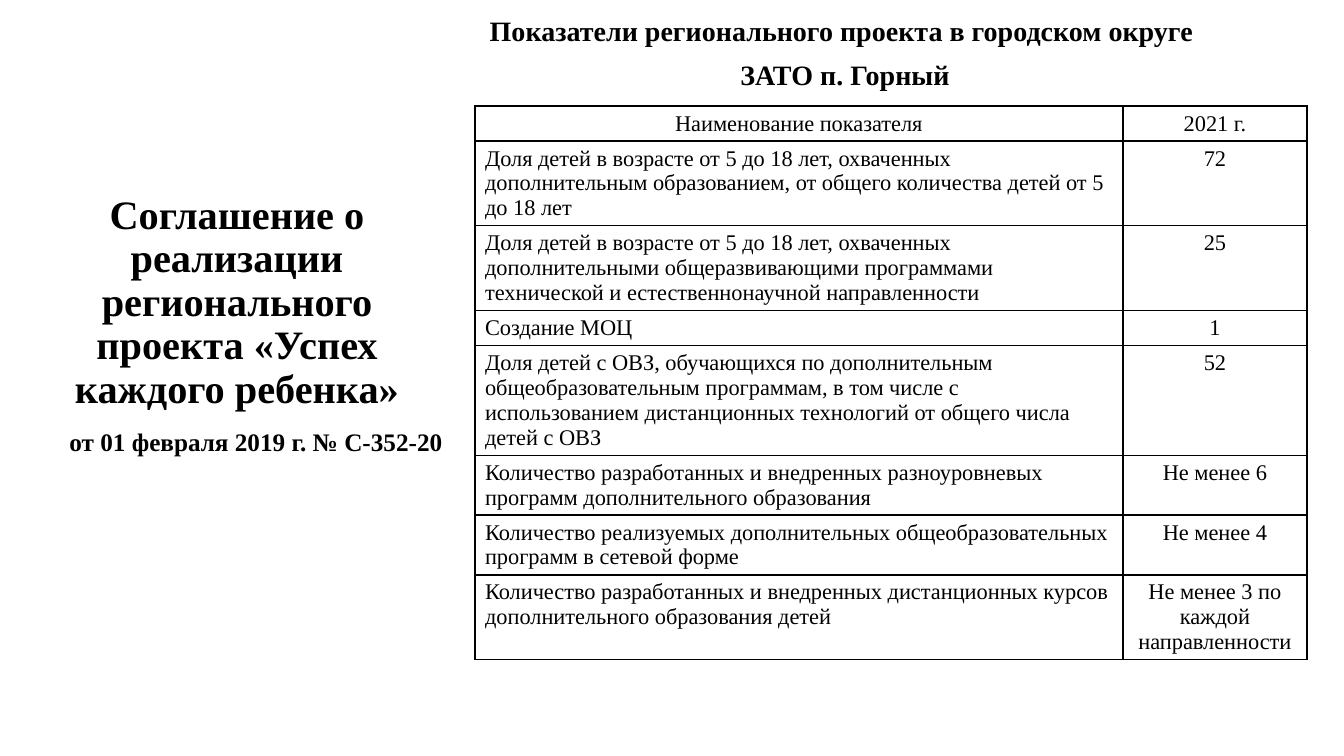
from lxml.etree import SubElement as Sub
from pptx import Presentation
from pptx.dml.color import RGBColor as Rgb
from pptx.enum.text import MSO_ANCHOR as Anchor, MSO_AUTO_SIZE as Fit, PP_ALIGN as Align
from pptx.oxml.ns import qn
from pptx.util import Emu, Pt

FONT = "Times New Roman"
BLACK = "000000"
CAPTION_LAYOUT = 7
COLS = [648, 184]
ROW = 32
ROWS = [
    ("Наименование показателя", "2021 г."),
    ("Доля детей в возрасте от 5 до 18 лет, охваченных дополнительным "
     "образованием, от общего количества детей от 5 до 18 лет", "72"),
    ("Доля детей в возрасте от 5 до 18 лет, охваченных дополнительными "
     "общеразвивающими программами технической и естественнонаучной "
     "направленности", "25"),
    ("Создание МОЦ", "1"),
    ("Доля детей с ОВЗ, обучающихся по дополнительным общеобразовательным "
     "программам, в том числе с использованием дистанционных технологий "
     "от общего числа детей с ОВЗ", "52"),
    ("Количество разработанных и внедренных разноуровневых программ "
     "дополнительного образования", "Не менее 6"),
    ("Количество реализуемых дополнительных общеобразовательных программ "
     "в сетевой форме", "Не менее 4"),
    ("Количество разработанных и внедренных дистанционных курсов "
     "дополнительного образования детей", "Не менее 3 по каждой направленности"),
]


def px(n):
    """Turn pixels, 100.8 to the inch, into EMU."""
    return Emu(round(n * 914400 / 100.8))


def color(code):
    return Rgb.from_string(code)


def write(para, text, size, bold=False, align=Align.CENTER):
    para.alignment = align
    run = para.add_run()
    run.text = text
    font = run.font
    font.name, font.size, font.bold = FONT, Pt(size), bold
    font.color.rgb = color(BLACK)


def fill_holder(holder, box, lines, size, before=0, anchor=Anchor.TOP):
    """Move a placeholder and write bold centred lines without bullets."""
    holder.left, holder.top, holder.width, holder.height = map(px, box)
    frame = holder.text_frame
    frame.word_wrap = True
    frame.auto_size = Fit.NONE
    frame.vertical_anchor = anchor
    for i, line in enumerate(lines):
        para = frame.add_paragraph() if i else frame.paragraphs[0]
        para.line_spacing = 0.9
        para.space_before = Pt(before)
        props = para._p.get_or_add_pPr()
        props.set("marL", "0")
        props.set("indent", "0")
        Sub(props, qn("a:buNone"))
        write(para, line, size, bold=True)


def frame_cell(cell):
    """Give a cell thin black borders and no fill."""
    props = cell._tc.get_or_add_tcPr()
    for side in ("lnL", "lnR", "lnT", "lnB"):
        line = Sub(props, qn(f"a:{side}"), w=str(Pt(1)))
        solid = Sub(line, qn("a:solidFill"))
        Sub(solid, qn("a:srgbClr"), val=BLACK)
    cell.fill.background()


def add_grid(slide, left, top):
    shape = slide.shapes.add_table(len(ROWS), len(COLS), px(left), px(top),
                                   px(sum(COLS)), px(ROW * len(ROWS)))
    table = shape.table
    table.first_row = table.horz_banding = False
    for col, width in zip(table.columns, COLS):
        col.width = px(width)
    for r, texts in enumerate(ROWS):
        for c, text in enumerate(texts):
            cell = table.cell(r, c)
            frame_cell(cell)
            align = Align.LEFT if r and not c else Align.CENTER
            write(cell.text_frame.paragraphs[0], text, 16, align=align)


def main():
    deck = Presentation()
    deck.slide_width, deck.slide_height = px(1344), px(756)
    slide = deck.slides.add_slide(deck.slide_layouts[CAPTION_LAYOUT])
    title, body, date = slide.placeholders
    fill_holder(title, (28, 203, 418, 214),
                ["Соглашение о реализации регионального проекта "
                 "«Успех каждого ребенка»"], 28.8, anchor=Anchor.BOTTOM)
    fill_holder(body, (438, 12, 814, 681),
                ["Показатели регионального проекта в городском округе ",
                 "ЗАТО п. Горный"], 20, before=10)
    fill_holder(date, (37, 425, 438, 39),
                ["от 01 февраля 2019 г. № С-352-20"], 18, before=10)
    add_grid(slide, 475, 106)
    deck.save("out.pptx")


if __name__ == "__main__":
    main()
